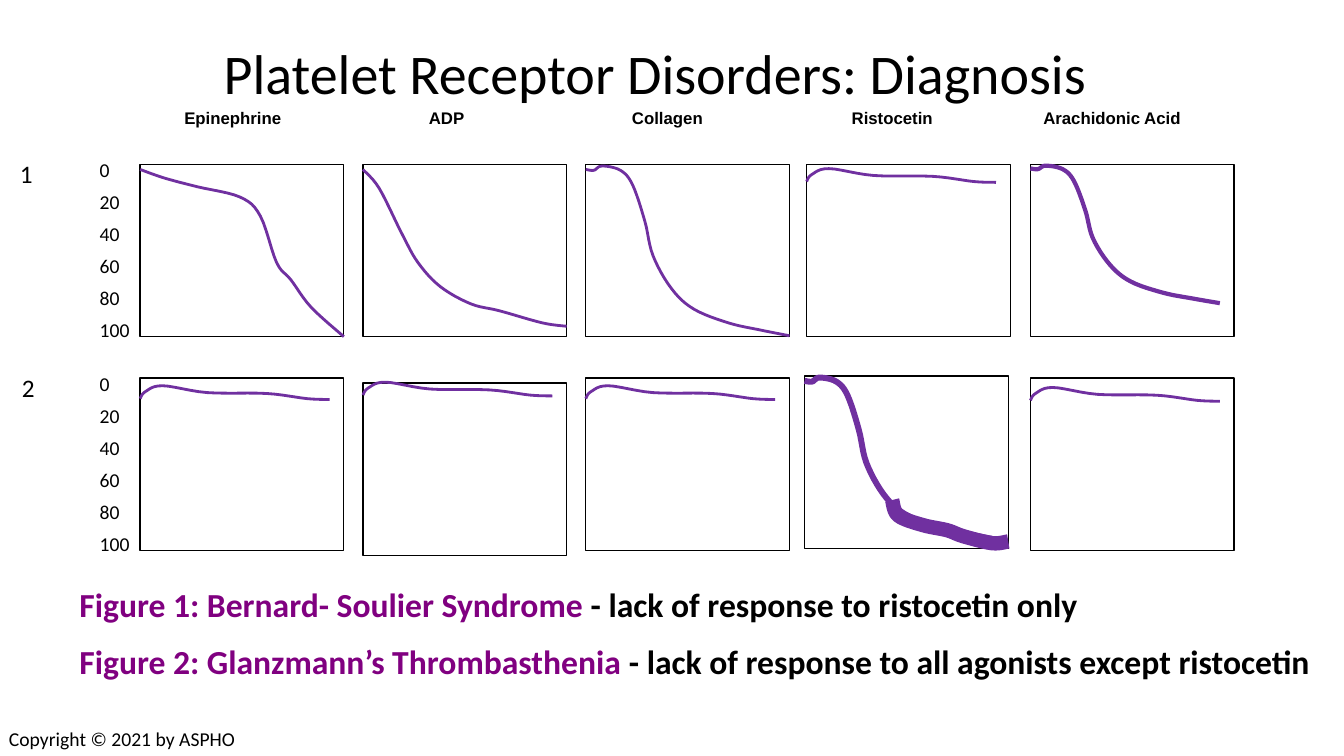
from pptx import Presentation
from pptx.dml.color import RGBColor
from pptx.enum.shapes import MSO_SHAPE
from pptx.enum.text import PP_ALIGN
from pptx.util import Inches, Pt

RECT = MSO_SHAPE.RECTANGLE
LEFT, CENTER = PP_ALIGN.LEFT, PP_ALIGN.CENTER
BLACK = RGBColor(0x00, 0x00, 0x00)
PLUM = RGBColor(0x80, 0x00, 0x80)
PURPLE = RGBColor(0x70, 0x30, 0xA0)

PANEL_W, PANEL_H = 2.02, 1.71
STEPS = 6

prs = Presentation()
prs.slide_width, prs.slide_height = Inches(13.33), Inches(7.5)
s = prs.slides.add_slide(prs.slide_layouts[6])


def add_text(x, y, w, h, paragraphs, size, font="Calibri", bold=False,
             align=LEFT, before=0, after=0):
    tf = s.shapes.add_textbox(Inches(x), Inches(y), Inches(w), Inches(h)).text_frame
    tf.word_wrap = True
    for i, runs in enumerate(paragraphs):
        p = tf.paragraphs[0] if i == 0 else tf.add_paragraph()
        p.alignment = align
        p.space_before = Pt(before if i else 0)
        p.space_after = Pt(after)
        p.font.size, p.font.name, p.font.bold = Pt(size), font, bold
        for text, color in runs:
            r = p.add_run()
            r.text = text
            r.font.color.rgb = color


def add_curve(left, top, knots, width, x_scale=1, y_scale=1, shift=0):
    """Draw a Catmull-Rom spline through knots given in percent of a panel."""
    padded = [knots[0], *knots, knots[-1]]
    smooth = [knots[0]]
    for a, b, c, d in zip(padded, padded[1:], padded[2:], padded[3:]):
        for step in range(1, STEPS + 1):
            t = step / STEPS
            smooth.append([
                (2 * q + (r - p) * t + (2 * p - 5 * q + 4 * r - u) * t ** 2
                 + (3 * q - p - 3 * r + u) * t ** 3) / 2
                for p, q, r, u in zip(a, b, c, d)])
    pts = [(Inches(left + PANEL_W * x_scale * time / 100),
            Inches(top + PANEL_H * (y_scale * response + shift) / 100))
           for time, response in smooth]
    builder = s.shapes.build_freeform(*pts[0])
    builder.add_line_segments(pts[1:], close=False)
    sp = builder.convert_to_shape()
    sp.shadow.inherit = False
    sp.fill.background()
    sp.line.color.rgb = PURPLE
    sp.line.width = Pt(width)


add_text(2.08, 0.33, 8.83, 0.77,
         [[("Platelet Receptor Disorders: Diagnosis", BLACK)]], 40, align=CENTER)

agonists = [("Epinephrine", 2.31), ("ADP", 4.43), ("Collagen", 6.62),
            ("Ristocetin", 8.85), ("Arachidonic Acid", 11.03)]
for name, mid in agonists:
    add_text(mid - 1, 1.02, 2, 0.3, [[(name, BLACK)]], 12, "Arial", True, CENTER)

ticks = [[(str(percent), BLACK)] for percent in range(0, 101, 20)]
for label, x, y in [("1", 0.1, 1.52), ("2", 0.12, 3.64)]:
    add_text(x, y, 0.5, 0.4, [[(label, BLACK)]], 18)
    add_text(0.89, y, 0.63, 1.94, ticks, 14, after=6)

no_response = [(0, 10), (2.5, 6), (11, 2.5), (33, 6.5), (62, 7), (82, 10), (93, 10.5)]
two_wave = [(0, 3), (12, 8), (28, 13), (49, 19), (59, 30), (67, 57), (74, 67),
            (84, 83), (100, 100)]
steady_fall = [(0, 3), (8, 14), (19, 40), (27, 57), (38, 71), (53, 81), (67, 85),
               (88, 92), (100, 94)]
lag_then_fall = [(0, 3), (4, 3.5), (8, 1), (17, 3.5), (23, 12), (29, 33), (33, 53),
                 (42, 72), (53, 84), (70, 92), (85, 96), (100, 99.5)]
thick_tail = [(43, 72), (46, 81), (58, 86.5), (70, 89.5), (78, 93), (92, 97), (100, 96)]

bernard_soulier = [
    (1.39, 1.63, two_wave, 2, {}),
    (3.6, 1.63, steady_fall, 2, {}),
    (5.81, 1.63, lag_then_fall, 2, {}),
    (8, 1.63, no_response, 2, {}),
    (10.22, 1.63, lag_then_fall, 3, {"x_scale": 0.93, "y_scale": 0.81}),
]
glanzmann = [
    (1.39, 3.75, no_response, 2, {"shift": 2}),
    (3.6, 3.8, no_response, 2, {"shift": -3}),
    (5.81, 3.75, no_response, 2, {"shift": 2}),
    (7.98, 3.73, lag_then_fall, 4.25, {"x_scale": 0.92, "y_scale": 0.95}),
    (10.22, 3.75, no_response, 2, {"shift": 3}),
]
for left, top, response, width, fit in bernard_soulier + glanzmann:
    sp = s.shapes.add_shape(RECT, Inches(left), Inches(top),
                            Inches(PANEL_W), Inches(PANEL_H))
    sp.shadow.inherit = False
    sp.fill.background()
    sp.line.color.rgb = BLACK
    sp.line.width = Pt(1)
    add_curve(left, top, response, width, **fit)
add_curve(7.98, 3.73, thick_tail, 10.25)

add_text(0.69, 5.74, 12.56, 1.57, [
    [("Figure 1: Bernard- Soulier Syndrome ", PLUM),
     ("- lack of response to ristocetin only", BLACK)],
    [("Figure 2: Glanzmann’s Thrombasthenia ", PLUM),
     ("- lack of response to all agonists except ristocetin", BLACK)],
], 24, bold=True, before=12)
add_text(-0.01, 7.16, 2.48, 0.34, [[("Copyright © 2021 by ASPHO", BLACK)]], 14)

prs.save("out.pptx")
